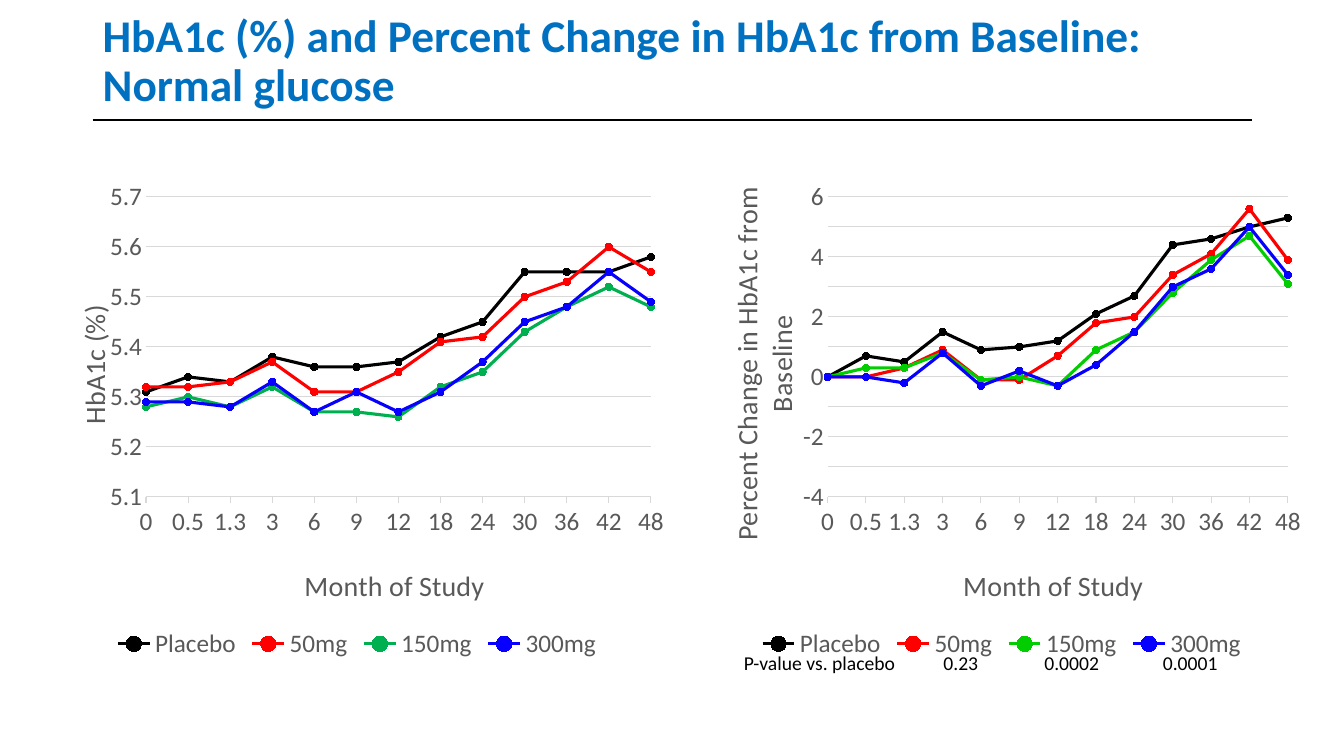
from lxml.etree import SubElement
from pptx import Presentation
from pptx.chart.data import CategoryChartData
from pptx.dml.color import RGBColor
from pptx.enum.chart import (
    XL_AXIS_CROSSES as Crosses, XL_CHART_TYPE as ChartType,
    XL_LEGEND_POSITION as LegendPosition, XL_MARKER_STYLE as Marker,
    XL_TICK_MARK as Tick)
from pptx.enum.shapes import MSO_CONNECTOR as Connector
from pptx.enum.text import MSO_ANCHOR as Anchor, PP_ALIGN as Align
from pptx.oxml.ns import qn
from pptx.util import Inches, Pt

FONT = "Calibri"
BLACK = RGBColor(0x00, 0x00, 0x00)
GREY = RGBColor(0x59, 0x59, 0x59)
PALE = RGBColor(0xD9, 0xD9, 0xD9)
BLUE = RGBColor(0x00, 0x70, 0xC0)
RED = RGBColor(0xFF, 0x00, 0x00)
GREEN = RGBColor(0x00, 0xB0, 0x50)
LIME = RGBColor(0x02, 0xCD, 0x00)
INDIGO = RGBColor(0x07, 0x00, 0xFF)

TITLE = "HbA1c (%) and Percent Change in HbA1c from Baseline: Normal glucose"
MONTHS = ["0", "0.5", "1.3", "3", "6", "9", "12", "18", "24", "30", "36", "42", "48"]
DOSES = ["Placebo", "50mg", "150mg", "300mg"]
P_VALUES = ["", "P-value vs. placebo", "0.23", "0.0002", "0.0001", ""]
P_WIDTHS = [1.37, 2.24, 1.1, 1.1, 1.25, 1.83]

CHART_TOP, CHART_HEIGHT = 1.71, 4.88
CHARTS = [
    {
        "left": 0.37, "width": 6.34, "axis": "HbA1c (%)", "format": "#,##0.0",
        "scale": (5.1, 5.7, 0.1), "colors": [BLACK, RED, GREEN, INDIGO],
        "plot": (0.17, 0.05, 0.79, 0.61),
        "month_at": (0.41, 0.79), "axis_at": (0.05, 0.26),
        "values": [
            (5.31, 5.34, 5.33, 5.38, 5.36, 5.36, 5.37, 5.42, 5.45, 5.55, 5.55, 5.55, 5.58),
            (5.32, 5.32, 5.33, 5.37, 5.31, 5.31, 5.35, 5.41, 5.42, 5.5, 5.53, 5.6, 5.55),
            (5.28, 5.3, 5.28, 5.32, 5.27, 5.27, 5.26, 5.32, 5.35, 5.43, 5.48, 5.52, 5.48),
            (5.29, 5.29, 5.28, 5.33, 5.27, 5.31, 5.27, 5.31, 5.37, 5.45, 5.48, 5.55, 5.49),
        ],
    },
    {
        "left": 6.85, "width": 6.17, "axis": "Percent Change in HbA1c from Baseline",
        "format": "#,##0",
        "scale": (-4, 6, 1), "colors": [BLACK, RED, LIME, INDIGO],
        "plot": (0.22, 0.05, 0.74, 0.61),
        "month_at": (0.43, 0.79), "axis_at": (0.05, 0.02),
        "values": [
            (0, 0.7, 0.5, 1.5, 0.9, 1, 1.2, 2.1, 2.7, 4.4, 4.6, 5, 5.3),
            (0, 0, 0.3, 0.9, -0.1, -0.1, 0.7, 1.8, 2, 3.4, 4.1, 5.6, 3.9),
            (0, 0.3, 0.3, 0.8, -0.1, 0, -0.3, 0.9, 1.5, 2.8, 3.9, 4.7, 3.1),
            (0, 0, -0.2, 0.8, -0.3, 0.2, -0.3, 0.4, 1.5, 3, 3.6, 5, 3.4),
        ],
    },
]


def style_font(font, size, color, bold=False):
    font.name, font.size, font.bold = FONT, Pt(size), bold
    font.color.rgb = color


def add_run(para, text, size, color, bold=False):
    span = para.add_run()
    span.text = text
    style_font(span.font, size, color, bold)


def place(parent, index, shares, inner=False):
    for old in parent.findall(qn("c:layout")):
        parent.remove(old)
    layout = parent.makeelement(qn("c:layout"))
    parent.insert(index, layout)
    manual = SubElement(layout, qn("c:manualLayout"))
    if inner:
        SubElement(manual, qn("c:layoutTarget")).set("val", "inner")
    for mode in ("xMode", "yMode"):
        SubElement(manual, qn(f"c:{mode}")).set("val", "edge")
    for name, share in zip("xywh", shares):
        SubElement(manual, qn(f"c:{name}")).set("val", str(share))


def title_axis(axis, text, shares, turn):
    title = axis.axis_title
    frame = title.text_frame
    add_run(frame.paragraphs[0], text, 20, GREY)
    next(title.element.iter(qn("a:bodyPr"))).set("rot", str(turn * 60000))
    place(title.element, 1, shares)


def start_on_axis(chart):
    scale = next(chart.element.iter(qn("c:valAx")))
    for old in scale.findall(qn("c:crossBetween")):
        scale.remove(old)
    between = scale.makeelement(qn("c:crossBetween"))
    between.set("val", "midCat")
    scale.find(qn("c:crosses")).addnext(between)


def add_line_chart(page, info):
    data = CategoryChartData(number_format=info["format"])
    data.categories = MONTHS
    for dose, values in zip(DOSES, info["values"]):
        data.add_series(dose, values)
    chart = page.shapes.add_chart(
        ChartType.LINE_MARKERS, Inches(info["left"]), Inches(CHART_TOP),
        Inches(info["width"]), Inches(CHART_HEIGHT), data).chart
    chart.has_title = False
    style_font(chart.font, 10, BLACK)
    chart.has_legend = True
    chart.legend.position = LegendPosition.BOTTOM
    chart.legend.include_in_layout = False
    style_font(chart.legend.font, 18, GREY)

    months, levels = chart.category_axis, chart.value_axis
    for axis in (months, levels):
        style_font(axis.tick_labels.font, 18, GREY)
        axis.minor_tick_mark = Tick.NONE
    months.major_tick_mark = Tick.OUTSIDE
    levels.major_tick_mark = Tick.NONE
    levels.minimum_scale, levels.maximum_scale, levels.major_unit = info["scale"]
    levels.crosses = Crosses.MINIMUM
    levels.tick_labels.number_format = info["format"]
    levels.tick_labels.number_format_is_linked = False
    levels.format.line.fill.background()
    levels.has_major_gridlines = True
    for line in (months.format.line, levels.major_gridlines.format.line):
        line.color.rgb, line.width = PALE, Pt(0.75)
    title_axis(months, "Month of Study", info["month_at"], 0)
    title_axis(levels, info["axis"], info["axis_at"], -90)
    start_on_axis(chart)
    place(next(chart.element.iter(qn("c:plotArea"))), 0, info["plot"], True)

    chart.plots[0].vary_by_categories = False
    for series, color in zip(chart.plots[0].series, info["colors"]):
        series.smooth = False
        series.format.line.color.rgb = color
        series.format.line.width = Pt(2.25)
        series.marker.style, series.marker.size = Marker.CIRCLE, 5
        series.marker.format.fill.solid()
        series.marker.format.fill.fore_color.rgb = color
        series.marker.format.line.color.rgb = color


def add_heading(page):
    rule = page.shapes.add_connector(
        Connector.STRAIGHT, Inches(0.92), Inches(1.19), Inches(12.42), Inches(1.19))
    rule.line.color.rgb, rule.line.width = BLACK, Pt(1.5)
    SubElement(next(rule.element.iter(qn("p:spPr"))), qn("a:effectLst"))
    box = page.shapes.add_textbox(Inches(0.92), Inches(0.14), Inches(11.5), Inches(0.95))
    frame = box.text_frame
    frame.word_wrap = True
    frame.vertical_anchor = Anchor.MIDDLE
    para = frame.paragraphs[0]
    para.line_spacing = 0.9
    add_run(para, TITLE, 32.4, BLUE, True)


def add_p_values(page):
    frame = page.shapes.add_table(
        1, len(P_VALUES), Inches(5.37), Inches(6.38), Inches(sum(P_WIDTHS)), Inches(0.41))
    table = frame.table
    table.first_row = table.horz_banding = False
    style = next(frame.element.iter(qn("a:tableStyleId")))
    style.text = "{2D5ABB26-0587-4C30-8999-92F81FD0307C}"
    for index, (text, width) in enumerate(zip(P_VALUES, P_WIDTHS)):
        table.columns[index].width = Inches(width)
        cell = table.cell(0, index)
        cell.fill.background()
        cell.vertical_anchor = Anchor.MIDDLE
        if text:
            para = cell.text_frame.paragraphs[0]
            para.alignment = Align.RIGHT if index == 1 else Align.CENTER
            add_run(para, text, 14, BLACK)


def main():
    deck = Presentation()
    deck.slide_width, deck.slide_height = Inches(13.33), Inches(7.5)
    page = deck.slides.add_slide(deck.slide_layouts[6])
    add_heading(page)
    for info in CHARTS:
        add_line_chart(page, info)
    add_p_values(page)
    deck.save("out.pptx")


if __name__ == "__main__":
    main()
